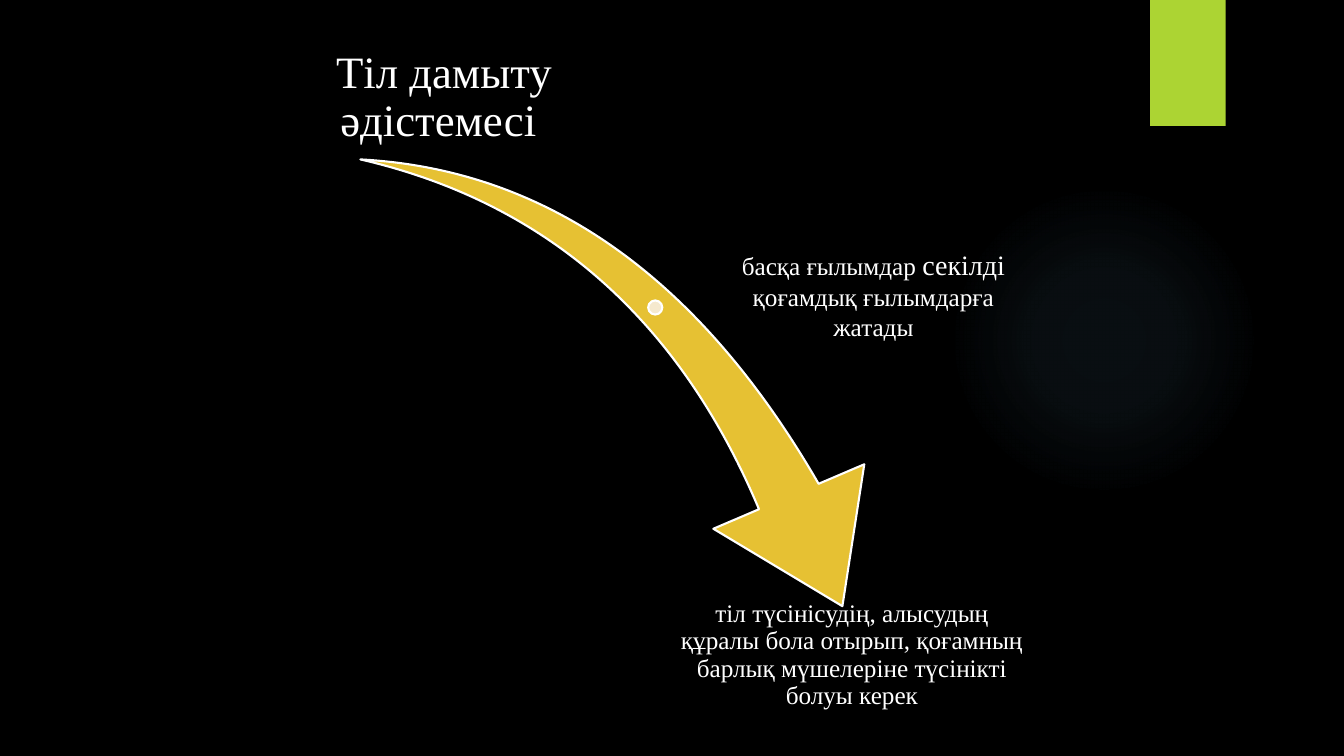
from lxml.etree import SubElement
from pptx import Presentation
from pptx.dml.color import RGBColor
from pptx.enum.shapes import MSO_SHAPE
from pptx.enum.text import MSO_ANCHOR, PP_ALIGN
from pptx.oxml.ns import qn
from pptx.util import Pt

HUES = {"back": "000000", "glow": "7AC4F0", "tab": "ACD433",
        "arrow": "E6C133", "dot": "F5E9CE", "text": "FFFFFF"}
FACE = "Times New Roman"


def hue(name):
    return RGBColor.from_string(HUES[name])


def shape(slide, kind, box, fill, line=None):
    item = slide.shapes.add_shape(kind, *map(Pt, box))
    item.shadow.inherit = False
    item.fill.solid()
    item.fill.fore_color.rgb = hue(fill)
    if line:
        item.line.color.rgb = hue(line)
        item.line.width = Pt(1.5)
    else:
        item.line.fill.background()
    return item


def label(slide, box, runs, size, anchor, inset, space=0.9):
    """Centred text; each run is its words and its own size or None."""
    frame = slide.shapes.add_textbox(*map(Pt, box)).text_frame
    frame.word_wrap = True
    frame.vertical_anchor = anchor
    frame.margin_left = frame.margin_right = Pt(inset)
    frame.margin_top = frame.margin_bottom = Pt(inset)
    para = frame.paragraphs[0]
    para.alignment = PP_ALIGN.CENTER
    para.line_spacing = space
    para.font.name = FACE
    para.font.size = Pt(size)
    para.font.color.rgb = hue("text")
    for words, own in runs:
        run = para.add_run()
        run.text = words
        if own:
            run.font.size = Pt(own)


def glow(slide, box):
    """Soft round light that fades out toward its edge."""
    item = shape(slide, MSO_SHAPE.OVAL, box, "glow")
    item.fill.gradient()
    grad = item.fill._xPr.find(qn("a:gradFill"))
    for child in list(grad):
        grad.remove(child)
    stops = SubElement(grad, qn("a:gsLst"))
    for pos, alpha in ((0, 7), (36, 6), (69, 0)):
        stop = SubElement(stops, qn("a:gs"), pos=str(pos * 1000))
        color = SubElement(stop, qn("a:srgbClr"), val=HUES["glow"])
        SubElement(color, qn("a:alpha"), val=str(alpha * 1000))
    way = SubElement(grad, qn("a:path"), path="circle")
    SubElement(way, qn("a:fillToRect"),
               {side: "50000" for side in "ltrb"})


def decor(slide, left, top):
    glow(slide, (left + 677.5, top + 131.8, 221.8, 221.8))
    shape(slide, MSO_SHAPE.RECTANGLE, (left + 821.5, top, 54, 90), "tab")


def flow(slide, left, top):
    """Curved arrow with a dot and three labels along it."""
    arrow = shape(slide, MSO_SHAPE.SWOOSH_ARROW,
                  (left + 26.6, top + 93.6, 404.6, 282.2), "arrow", "text")
    arrow.rotation = 73.3
    arrow.adjustments[0] = 0.163
    arrow.adjustments[1] = 0.314
    shape(slide, MSO_SHAPE.OVAL, (left + 241.2, top + 182.2, 10.1, 10.1),
          "dot", "text")
    label(slide, (left, top, 190.8, 74.9),
          [("Тіл дамыту әдістемесі ", None)], 32, MSO_ANCHOR.BOTTOM, 2.9)
    label(slide, (left + 288.7, top + 140.4, 226.8, 74.9),
          [("басқа ғылымдар ", None), ("секілді", 20),
           (" қоғамдық ғылымдарға жатады", None)],
          18, MSO_ANCHOR.MIDDLE, 2.2, 1)
    label(slide, (left + 257.8, top + 394.6, 257.8, 74.9),
          [("тіл түсінісудің, алысудың құралы бола отырып, қоғамның "
            "барлық мүшелеріне түсінікті болуы керек", None)],
          18, MSO_ANCHOR.TOP, 2.2)


def main():
    deck = Presentation()
    deck.slide_width, deck.slide_height = Pt(960), Pt(540)
    slide = deck.slides.add_slide(deck.slide_layouts[6])
    slide.background.fill.solid()
    slide.background.fill.fore_color.rgb = hue("back")
    decor(slide, 0, 0)
    flow(slide, 221.8, 32.4)
    deck.save("out.pptx")


if __name__ == "__main__":
    main()
